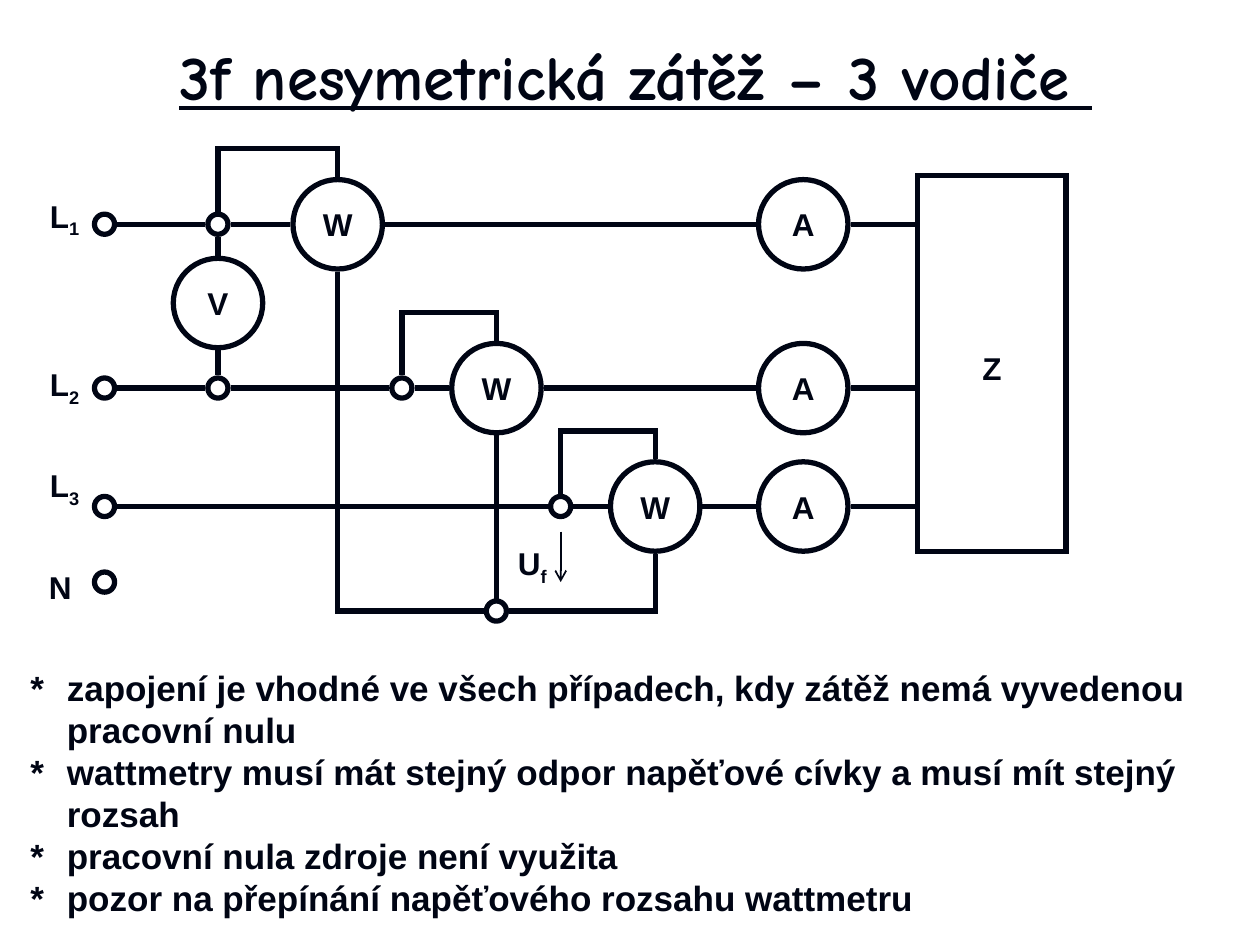
from itertools import pairwise

from lxml import etree
from pptx import Presentation
from pptx.dml.color import RGBColor
from pptx.enum.shapes import MSO_CONNECTOR, MSO_SHAPE
from pptx.enum.text import MSO_ANCHOR, MSO_AUTO_SIZE, PP_ALIGN
from pptx.oxml.ns import qn
from pptx.util import Inches, Pt

STRAIGHT = MSO_CONNECTOR.STRAIGHT
OVAL, RECTANGLE = MSO_SHAPE.OVAL, MSO_SHAPE.RECTANGLE
MIDDLE, TOP = MSO_ANCHOR.MIDDLE, MSO_ANCHOR.TOP
LEFT, CENTER, RIGHT = PP_ALIGN.LEFT, PP_ALIGN.CENTER, PP_ALIGN.RIGHT
FIXED = MSO_AUTO_SIZE.NONE

COLORS = {"ink": "000514"}
COLUMNS, ROWS = 100, 75
NODE, METER, GAP = 0.8, 3.55, 0.2  # radii and wire clearance, in grid cells


class Diagram:
    """Draws on one slide; lengths are columns and rows of the grid."""

    font, title_font = "Arial", "Comic Neue"

    def __init__(self, deck):
        self.page = deck.slides.add_slide(deck.slide_layouts[5])
        self.shapes = self.page.shapes
        self.column = deck.slide_width / COLUMNS
        self.row = deck.slide_height / ROWS
        self.ink = RGBColor.from_string(COLORS["ink"])

    def point(self, x, y):
        return round(x * self.column), round(y * self.row)

    def place(self, left, top, width, height):
        return *self.point(left, top), *self.point(width, height)

    def style_font(self, font, name, size):
        font.name, font.size, font.bold = name, Pt(size), True
        font.color.rgb = self.ink

    def outline(self, shape, width=3):
        shape.line.color.rgb = self.ink
        shape.line.width = Pt(width)

    def title(self, text, *area):
        box = self.shapes.title
        box.left, box.top, box.width, box.height = self.place(*area)
        frame = box.text_frame
        frame.text = text
        frame.vertical_anchor, frame.auto_size = MIDDLE, FIXED
        para = frame.paragraphs[0]
        para.alignment = CENTER
        self.style_font(para.font, self.title_font, 36)
        para.font.underline = True

    def text_box(self, area, anchor, wrap):
        frame = self.shapes.add_textbox(*self.place(*area)).text_frame
        frame.word_wrap, frame.auto_size = wrap, FIXED
        frame.vertical_anchor = anchor
        frame.margin_left = frame.margin_right = Inches(0.04)
        frame.margin_top = frame.margin_bottom = Inches(0.04)
        return frame

    def label(self, text, left, middle, width, align=RIGHT, subscript=""):
        frame = self.text_box((left, middle - 1.9, width, 3.8), MIDDLE, False)
        para = frame.paragraphs[0]
        para.alignment = align
        self.style_font(para.font, self.font, 18)
        para.add_run().text = text
        if subscript:
            span = para.add_run()
            span.text = subscript
            span.font._element.set("baseline", "-25000")

    def notes(self, lines, *area):
        frame = self.text_box(area, TOP, True)
        for index, line in enumerate(lines):
            para = frame.add_paragraph() if index else frame.paragraphs[0]
            para.text = f"*\t{line}"
            para.alignment = LEFT
            self.style_font(para.font, self.font, 20)
            indent = Inches(0.29)
            para._p.get_or_add_pPr().set("marL", str(indent))
            para._p.get_or_add_pPr().set("indent", str(-indent))

    def shape(self, kind, *area):
        shape = self.shapes.add_shape(kind, *self.place(*area))
        self.finish(shape)
        return shape

    def finish(self, shape):
        shape.shadow.inherit = False
        shape.fill.background()
        self.outline(shape)

    def miter(self, shape):
        join = etree.SubElement(shape.line._get_or_add_ln(), qn("a:miter"))
        join.set("lim", "800000")

    def circle(self, x, y, radius):
        self.shape(OVAL, x - radius, y - radius, 2 * radius, 2 * radius)

    def meter(self, letter, x, y):
        self.circle(x, y, METER)
        width = 3.1 if letter == "W" else 2
        self.label(letter, x - width / 2, y, width, CENTER)

    def load(self, *area):
        self.miter(self.shape(RECTANGLE, *area))

    def line(self, start, end, width=3, arrow=False):
        line = self.shapes.add_connector(
            STRAIGHT, *self.point(*start), *self.point(*end))
        self.outline(line, width)
        etree.SubElement(line._element.spPr, qn("a:effectLst"))
        if arrow:
            tail = etree.SubElement(line.line._get_or_add_ln(), qn("a:tailEnd"))
            tail.set("type", "arrow")

    def bent_wire(self, *corners):
        first, *rest = [self.point(*corner) for corner in corners]
        builder = self.shapes.build_freeform(*first, scale=1.0)
        builder.add_line_segments(rest, close=False)
        wire = builder.convert_to_shape()
        self.finish(wire)
        self.miter(wire)

    def chain(self, stops, y=None, x=None):
        """Wire up neighbouring stops, given as (centre, radius) pairs."""
        for (one, near), (two, far) in pairwise(stops):
            start = one + near + GAP * bool(near)
            end = two - far - GAP * bool(far)
            if x is None:
                self.line((start, y), (end, y))
            else:
                self.line((x, start), (x, end))


def main():
    deck = Presentation()
    deck.slide_width, deck.slide_height = Inches(10), Inches(7.5)
    diagram = Diagram(deck)
    diagram.title("3f nesymetrická zátěž – 3 vodiče ", 2, 2, 96.9, 7.9)

    terminal_x, voltmeter_x, ammeter_x, load_x = 8.3, 17.3, 63.75, 72.8
    star_y, neutral_y = 48.5, 46.2
    # Phase height, label height, voltage tap and wattmeter columns
    phases = [(17.8, 17.3, 17.3, 26.8),
              (30.8, 30.7, 31.9, 39.4),
              (40.2, 38.7, 44.5, 52)]

    # Phases: terminal, taps, wattmeter, ammeter and wires to the load
    for number, (y, label_y, tap_x, watt_x) in enumerate(phases, 1):
        nodes = [terminal_x, tap_x]
        if number == 2:
            nodes.insert(1, voltmeter_x)
        for x in nodes:
            diagram.circle(x, y, NODE)
        diagram.label("L", 3.5, label_y, 3.2, subscript=str(number))
        diagram.meter("W", watt_x, y)
        diagram.meter("A", ammeter_x, y)
        diagram.chain([(x, NODE) for x in nodes]
                      + [(watt_x, METER), (ammeter_x, METER), (load_x, 0)], y=y)
        diagram.bent_wire((tap_x, y - NODE - GAP), (tap_x, y - 6),
                          (watt_x, y - 6), (watt_x, y - METER - GAP))

    # Neutral terminal and load
    diagram.circle(terminal_x, neutral_y, NODE)
    diagram.label("N", 3.5, 46.6, 2.6)
    diagram.load(load_x, 13.9, 11.8, 29.9)
    diagram.label("Z", 77.6, 29.2, 2.3)

    # Voltmeter between the first two phases
    first_y, second_y, third_y = (phase[0] for phase in phases)
    voltmeter_y = 24.05
    diagram.meter("V", voltmeter_x, voltmeter_y)
    diagram.chain([(first_y, NODE), (voltmeter_y, METER), (second_y, NODE)],
                  x=voltmeter_x)

    # Common point of the wattmeter voltage coils
    first_x, star_x, third_x = (phase[3] for phase in phases)
    diagram.circle(star_x, star_y, NODE)
    diagram.chain([(second_y, METER), (star_y, NODE)], x=star_x)
    for x, y, side in [(first_x, first_y, -1), (third_x, third_y, 1)]:
        diagram.bent_wire((x, y + METER + GAP), (x, star_y),
                          (star_x + side * (NODE + GAP), star_y))

    # Phase voltage arrow
    diagram.line((44.5, 42.2), (44.5, 46.2), width=1, arrow=True)
    diagram.label("U", 40.6, 44.9, 3.2, subscript="f")

    diagram.notes([
        "zapojení je vhodné ve všech případech, kdy zátěž nemá vyvedenou pracovní nulu",
        "wattmetry musí mát stejný odpor napěťové cívky a musí mít stejný rozsah",
        "pracovní nula zdroje není využita",
        "pozor na přepínání napěťového rozsahu wattmetru",
    ], 2, 52.5, 96.5, 20.8)
    deck.save("out.pptx")


if __name__ == "__main__":
    main()
